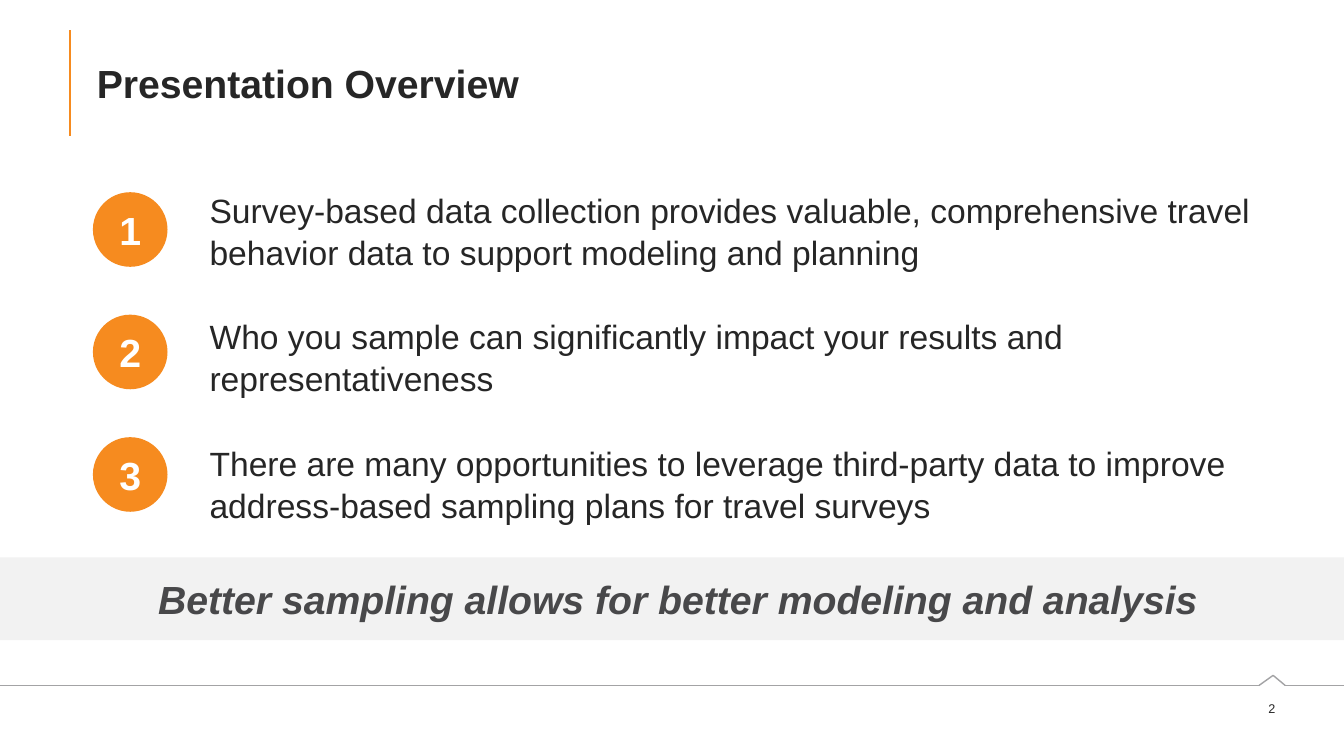
from dataclasses import dataclass
from itertools import pairwise

from lxml import etree
from pptx import Presentation
from pptx.dml.color import RGBColor
from pptx.enum import shapes, text
from pptx.oxml import ns
from pptx.util import Pt

ORANGE = RGBColor(0xF6, 0x8B, 0x1F)
INK = RGBColor(0x26, 0x26, 0x26)
SLATE = RGBColor(0x48, 0x48, 0x4A)
RULE_GRAY = RGBColor(0xA3, 0xA3, 0xA5)
BAND_GRAY = RGBColor(0xF2, 0xF2, 0xF2)
WHITE = RGBColor(0xFF, 0xFF, 0xFF)

WIDTH, HEIGHT = 960, 540
BADGE_LEFT, BADGE_TOP, BADGE_SIZE, BADGE_PITCH = 66.4, 137.3, 53.3, 87.5
POINT_INDENT = 80.6


@dataclass(frozen=True)
class Box:
    left: float
    top: float
    width: float
    height: float

    def lengths(self) -> tuple[Pt, Pt, Pt, Pt]:
        return Pt(self.left), Pt(self.top), Pt(self.width), Pt(self.height)


@dataclass(frozen=True)
class OverviewPoint:
    number: int
    statement: str


POINTS = [
    OverviewPoint(1, "Survey-based data collection provides valuable, comprehensive "
                     "travel behavior data to support modeling and planning"),
    OverviewPoint(2, "Who you sample can significantly impact your results and "
                     "representativeness"),
    OverviewPoint(3, "There are many opportunities to leverage third-party data to "
                     "improve address-based sampling plans for travel surveys"),
]


def write(frame, lines: list[str], *, size: float, color: RGBColor = INK,
          bold: bool = False, italic: bool = False,
          align=text.PP_ALIGN.LEFT, anchor=text.MSO_ANCHOR.MIDDLE,
          indent: float = 0, gap: float = 0, spacing: float = 1) -> None:
    frame.word_wrap = True
    frame.auto_size = text.MSO_AUTO_SIZE.NONE
    frame.vertical_anchor = anchor
    for index, line in enumerate(lines):
        paragraph = frame.paragraphs[0] if index == 0 else frame.add_paragraph()
        paragraph.alignment = align
        paragraph.line_spacing = spacing
        paragraph.space_before = Pt(gap if index else 0)
        properties = paragraph._p.get_or_add_pPr()
        properties.set("marL", str(Pt(indent)))
        properties.set("indent", "0")
        etree.SubElement(properties, ns.qn("a:buNone"))
        run = paragraph.add_run()
        run.text = line
        font = run.font
        font.name, font.size, font.color.rgb = "Arial", Pt(size), color
        font.bold, font.italic = bold, italic


def place(placeholder, box: Box) -> None:
    (placeholder.left, placeholder.top,
     placeholder.width, placeholder.height) = box.lengths()


def add_filled(slide, kind, box: Box, fill: RGBColor):
    shape = slide.shapes.add_shape(kind, *box.lengths())
    shape.shadow.inherit = False
    shape.fill.solid()
    shape.fill.fore_color.rgb = fill
    shape.line.fill.background()
    return shape


def add_rule(slide, start: tuple[float, float], end: tuple[float, float],
             color: RGBColor, weight: float) -> None:
    rule = slide.shapes.add_connector(
        shapes.MSO_CONNECTOR.STRAIGHT, *map(Pt, start + end))
    rule.line.color.rgb = color
    rule.line.width = Pt(weight)
    etree.SubElement(rule._element.spPr, ns.qn("a:effectLst"))


def add_badge(slide, index: int, point: OverviewPoint) -> None:
    box = Box(BADGE_LEFT, BADGE_TOP + index * BADGE_PITCH, BADGE_SIZE, BADGE_SIZE)
    badge = add_filled(slide, shapes.MSO_SHAPE.OVAL, box, ORANGE)
    write(badge.text_frame, [str(point.number)], size=28, color=WHITE, bold=True,
          align=text.PP_ALIGN.CENTER)


def main() -> None:
    deck = Presentation()
    deck.slide_width, deck.slide_height = Pt(WIDTH), Pt(HEIGHT)
    slide = deck.slides.add_slide(deck.slide_layouts[1])
    title, overview = slide.placeholders

    # Title with its accent rule
    place(title, Box(61.9, 21.6, 849.6, 75.6))
    write(title.text_frame, ["Presentation Overview"], size=28, bold=True)
    add_rule(slide, (50, 21.6), (50, 97.2), ORANGE, 1.5)

    # Numbered points
    place(overview, Box(61.9, 130.3, 849.6, 250))
    write(overview.text_frame, [point.statement for point in POINTS], size=24,
          anchor=text.MSO_ANCHOR.TOP, indent=POINT_INDENT, gap=30, spacing=1.05)
    for index, point in enumerate(POINTS):
        add_badge(slide, index, point)

    # Takeaway band
    add_filled(slide, shapes.MSO_SHAPE.RECTANGLE, Box(0, 398.2, WIDTH, 59), BAND_GRAY)
    takeaway = slide.shapes.add_textbox(*Box(97.2, 406.8, 774, 41.2).lengths())
    write(takeaway.text_frame,
          ["Better sampling allows for better modeling and analysis"],
          size=28, color=SLATE, bold=True, italic=True, align=text.PP_ALIGN.CENTER)

    # Footer rule with its peak, and the page number
    footer = [(0, 489.6), (899.3, 489.6), (909.4, 482.4), (918, 489.6), (WIDTH, 489.6)]
    for start, end in pairwise(footer):
        add_rule(slide, start, end, RULE_GRAY, 1)
    page_number = slide.shapes.add_textbox(*Box(877.8, 496.8, 40.3, 18).lengths())
    write(page_number.text_frame, ["2"], size=9, align=text.PP_ALIGN.RIGHT)

    deck.save("out.pptx")


if __name__ == "__main__":
    main()
